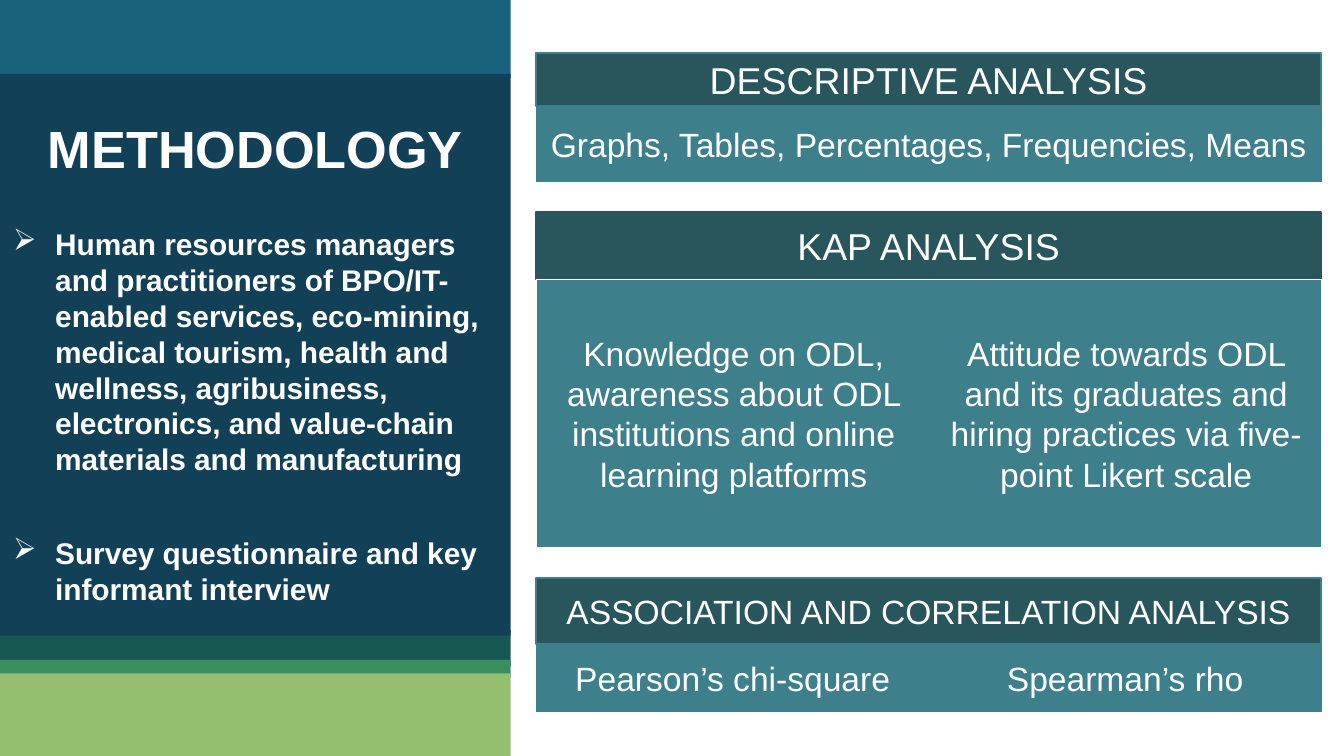
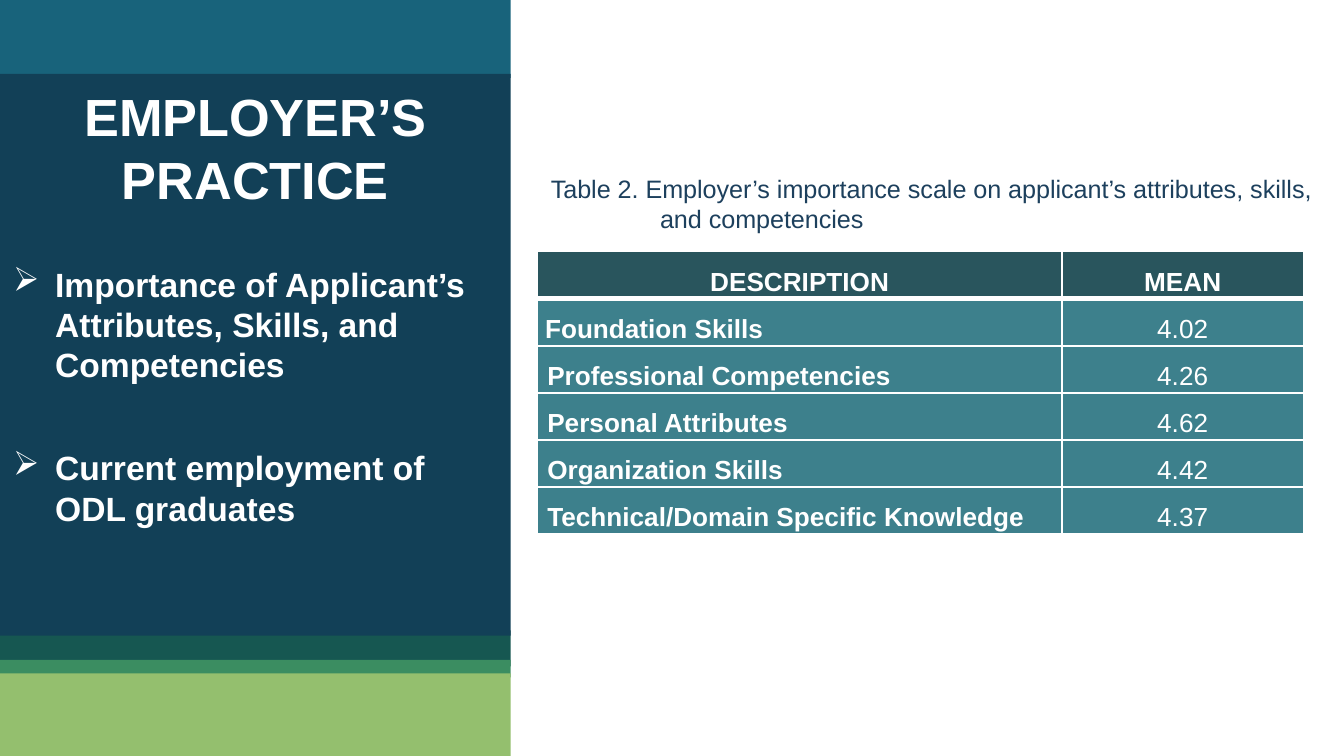
from dataclasses import dataclass
from itertools import accumulate, pairwise
from typing import Any

import pptx
import pptx.dml.color
import pptx.enum.shapes
import pptx.enum.text
import pptx.oxml
import pptx.oxml.ns
import pptx.util
from lxml import etree

Pt = pptx.util.Pt
ALIGN = pptx.enum.text.PP_ALIGN
ANCHOR = pptx.enum.text.MSO_ANCHOR


def rgb(code: str) -> pptx.dml.color.RGBColor:
    return pptx.dml.color.RGBColor.from_string(code)


@dataclass(frozen=True)
class Theme:
    font: str = "Arial"
    white: str = "FFFFFF"
    navy: str = "124057"
    ocean: str = "18637B"
    forest: str = "165751"
    green: str = "3B8D61"
    lime: str = "94BF6E"
    heading_fill: str = "29555D"
    detail_fill: str = "3D808C"
    caption_ink: str = "1D405D"
    title_size: float = 28
    heading_size: float = 20
    body_size: float = 18
    small_body_size: float = 16
    table_size: float = 14
    caption_size: float = 13.5


THEME = Theme()
SLIDE_WIDTH, SLIDE_HEIGHT = 720, 405
SIDEBAR_WIDTH = 273.6
PANEL_LEFT, PANEL_WIDTH = 287.3, 420.5
BULLET_INDENT = 22.5
CAPTION_INDENT = 58.5


@dataclass(frozen=True)
class Area:
    left: float
    top: float
    width: float
    height: float

    def lengths(self) -> list[int]:
        return [Pt(v) for v in (self.left, self.top, self.width, self.height)]


@dataclass(frozen=True)
class Band:
    top: float
    height: float
    fill: str


@dataclass(frozen=True)
class Detail:
    text: str
    width: float


@dataclass(frozen=True)
class AnalysisPanel:
    top: float
    heading: str
    heading_height: float
    detail_height: float
    details: tuple[Detail, ...]
    heading_size: float = THEME.heading_size
    heading_edge: str = THEME.detail_fill
    detail_edge: str = THEME.detail_fill


@dataclass(frozen=True)
class Sidebar:
    title: str
    bullets: tuple[str, ...]
    bullet_area: Area
    bullet_size: float
    anchor: Any


BANDS = (
    Band(337.7, 19.4, THEME.forest),
    Band(0, 41.8, THEME.ocean),
    Band(39.6, 301, THEME.navy),
    Band(353.5, 9.4, THEME.green),
    Band(360.7, 44.3, THEME.lime),
)

METHODOLOGY = Sidebar(
    "METHODOLOGY",
    (
        "Human resources managers and practitioners of BPO/IT-enabled services, "
        "eco-mining, medical tourism, health and wellness, agribusiness, "
        "electronics, and value-chain materials and manufacturing",
        "Survey questionnaire and key informant interview",
    ),
    Area(0, 113.8, SIDEBAR_WIDTH, 265.7), THEME.small_body_size, ANCHOR.TOP,
)
PRACTICE = Sidebar(
    "EMPLOYER’S PRACTICE",
    (
        "Importance of Applicant’s Attributes, Skills, and Competencies",
        "Current employment of ODL graduates",
    ),
    Area(0, 83.5, SIDEBAR_WIDTH, 257), THEME.body_size, ANCHOR.MIDDLE,
)

PANELS = (
    AnalysisPanel(
        28.4, "DESCRIPTIVE ANALYSIS", 28.5, 40.3,
        (Detail("Graphs, Tables, Percentages, Frequencies, Means", PANEL_WIDTH),),
    ),
    AnalysisPanel(
        113.8, "KAP ANALYSIS", 36, 143.3,
        (
            Detail("Knowledge on ODL, awareness about ODL institutions and "
                   "online learning platforms", 211.5),
            Detail("Attitude towards ODL and its graduates and hiring practices "
                   "via five-point Likert scale", 209),
        ),
        heading_edge=THEME.heading_fill, detail_edge=THEME.white,
    ),
    AnalysisPanel(
        309.6, "ASSOCIATION AND CORRELATION ANALYSIS", 35.6, 36,
        (Detail("Pearson’s chi-square", 210.5), Detail("Spearman’s rho", 210)),
        heading_size=THEME.body_size,
    ),
)

CAPTION = ("Table 2. Employer’s importance scale on applicant’s attributes, "
           "skills, and competencies")
IMPORTANCE_ROWS = (
    ("DESCRIPTION", "MEAN"),
    ("Foundation Skills", "4.02"),
    ("Professional Competencies", "4.26"),
    ("Personal Attributes", "4.62"),
    ("Organization Skills", "4.42"),
    ("Technical/Domain Specific Knowledge", "4.37"),
)
IMPORTANCE_COLUMNS = (280.8, 129.6)
IMPORTANCE_ROW_HEIGHT = 15.5


def apply(target: Any, **values: Any) -> None:
    for attribute, value in values.items():
        setattr(target, attribute, value)


def write(paragraph: Any, text: str, size: float, color: str = THEME.white,
          bold: bool = False, **layout: Any) -> None:
    run = paragraph.add_run()
    run.text = text
    apply(run.font, name=THEME.font, size=Pt(size), bold=bold)
    run.font.color.rgb = rgb(color)
    apply(paragraph, **layout)


def hang(paragraph: Any, indent: float) -> None:
    properties = paragraph._p.get_or_add_pPr()
    properties.set("marL", str(Pt(indent)))
    properties.set("indent", str(-Pt(indent)))


def add_text_area(slide: Any, area: Area, anchor: Any, inset: float | None = None) -> Any:
    frame = slide.shapes.add_textbox(*area.lengths()).text_frame
    apply(frame, word_wrap=True, vertical_anchor=anchor)
    if inset is not None:
        sides = ("left", "top", "right", "bottom")
        apply(frame, **{f"margin_{side}": Pt(inset) for side in sides})
    return frame


def add_block(shapes: Any, area: Area, fill: str, edge: str | None = None,
              edge_width: float = 0.5) -> Any:
    block = shapes.add_shape(pptx.enum.shapes.MSO_SHAPE.RECTANGLE, *area.lengths())
    block.shadow.inherit = False
    block.fill.solid()
    block.fill.fore_color.rgb = rgb(fill)
    if edge:
        block.line.color.rgb = rgb(edge)
        block.line.width = Pt(edge_width)
    else:
        block.line.fill.background()
    return block


def add_label_block(shapes: Any, area: Area, text: str, size: float, fill: str,
                    edge: str, edge_width: float) -> None:
    frame = add_block(shapes, area, fill, edge, edge_width).text_frame
    apply(frame, word_wrap=True, vertical_anchor=ANCHOR.MIDDLE)
    write(frame.paragraphs[0], text, size, alignment=ALIGN.CENTER)


def add_divider(shapes: Any, x: float, top: float, height: float) -> None:
    divider = shapes.add_connector(pptx.enum.shapes.MSO_CONNECTOR.STRAIGHT,
                                   Pt(x), Pt(top), Pt(x), Pt(top + height))
    divider.line.color.rgb = rgb(THEME.detail_fill)
    divider.line.width = Pt(0.5)
    etree.SubElement(divider._element.spPr, pptx.oxml.ns.qn("a:effectLst"))


def add_sidebar(slide: Any, sidebar: Sidebar) -> None:
    for band in BANDS:
        add_block(slide.shapes, Area(0, band.top, SIDEBAR_WIDTH, band.height), band.fill)
    title = add_text_area(slide, Area(0, 39.6, SIDEBAR_WIDTH, 78.5), ANCHOR.MIDDLE, 7.2)
    write(title.paragraphs[0], sidebar.title, THEME.title_size, bold=True,
          alignment=ALIGN.CENTER)

    body = add_text_area(slide, sidebar.bullet_area, sidebar.anchor, 7.2)
    for index, bullet in enumerate(sidebar.bullets):
        paragraph = body.add_paragraph() if index else body.paragraphs[0]
        gap = 12 + 1.2 * sidebar.bullet_size if index else 6
        write(paragraph, bullet, sidebar.bullet_size, bold=True, space_before=Pt(gap))
        hang(paragraph, BULLET_INDENT)
        marker = etree.SubElement(paragraph._p.pPr, pptx.oxml.ns.qn("a:buChar"))
        marker.set("char", "➢")


def add_analysis_panel(slide: Any, panel: AnalysisPanel) -> None:
    shapes = slide.shapes.add_group_shape().shapes
    add_label_block(shapes, Area(PANEL_LEFT, panel.top, PANEL_WIDTH, panel.heading_height),
                    panel.heading, panel.heading_size, THEME.heading_fill,
                    panel.heading_edge, 1)
    detail_top = panel.top + panel.heading_height
    edges = list(accumulate((d.width for d in panel.details), initial=PANEL_LEFT))
    for detail, left in zip(panel.details, edges):
        add_label_block(shapes, Area(left, detail_top, detail.width, panel.detail_height),
                        detail.text, THEME.body_size, THEME.detail_fill,
                        panel.detail_edge, 0.5)
    for _, split in pairwise(edges[:-1]):
        add_divider(shapes, split, detail_top, panel.detail_height)


def add_cell_borders(cell: Any, bottom: float, top: float) -> None:
    properties = cell._tc.get_or_add_tcPr()
    for side, width in {"L": 1, "R": 1, "T": top, "B": bottom}.items():
        properties.append(pptx.oxml.parse_xml(
            f'<a:ln{side} {pptx.oxml.ns.nsdecls("a")} w="{Pt(width)}"><a:solidFill>'
            f'<a:srgbClr val="{THEME.white}"/></a:solidFill></a:ln{side}>'))


def add_importance_table(slide: Any) -> None:
    area = Area(288, 134.8, sum(IMPORTANCE_COLUMNS),
                IMPORTANCE_ROW_HEIGHT * len(IMPORTANCE_ROWS))
    table = slide.shapes.add_table(len(IMPORTANCE_ROWS), len(IMPORTANCE_COLUMNS),
                                   *area.lengths()).table
    apply(table, first_row=False, horz_banding=False)
    for column, width in zip(table.columns, IMPORTANCE_COLUMNS):
        column.width = Pt(width)
    for r, row in enumerate(IMPORTANCE_ROWS):
        margin = Pt(4 if r < 2 else 5.2)
        for c, text in enumerate(row):
            cell = table.cell(r, c)
            add_cell_borders(cell, bottom=3 if r == 0 else 1, top=3 if r == 1 else 1)
            cell.fill.solid()
            cell.fill.fore_color.rgb = rgb(THEME.detail_fill if r else THEME.heading_fill)
            apply(cell, vertical_anchor=ANCHOR.MIDDLE, margin_left=margin,
                  margin_right=margin, margin_top=0, margin_bottom=0)
            write(cell.text_frame.paragraphs[0], text, THEME.table_size,
                  bold=r == 0 or c == 0, line_spacing=1.5,
                  alignment=ALIGN.LEFT if r and c == 0 else ALIGN.CENTER)


def add_caption(slide: Any) -> None:
    frame = add_text_area(slide, Area(288, 89.3, 437.8, 29.5), ANCHOR.TOP)
    write(frame.paragraphs[0], CAPTION, THEME.caption_size, THEME.caption_ink)
    hang(frame.paragraphs[0], CAPTION_INDENT)


def main() -> None:
    deck = pptx.Presentation()
    apply(deck, slide_width=Pt(SLIDE_WIDTH), slide_height=Pt(SLIDE_HEIGHT))
    blank = deck.slide_layouts[6]

    methodology = deck.slides.add_slide(blank)
    add_sidebar(methodology, METHODOLOGY)
    for panel in PANELS:
        add_analysis_panel(methodology, panel)

    practice = deck.slides.add_slide(blank)
    add_sidebar(practice, PRACTICE)
    add_importance_table(practice)
    add_caption(practice)

    deck.save("out.pptx")


if __name__ == "__main__":
    main()
